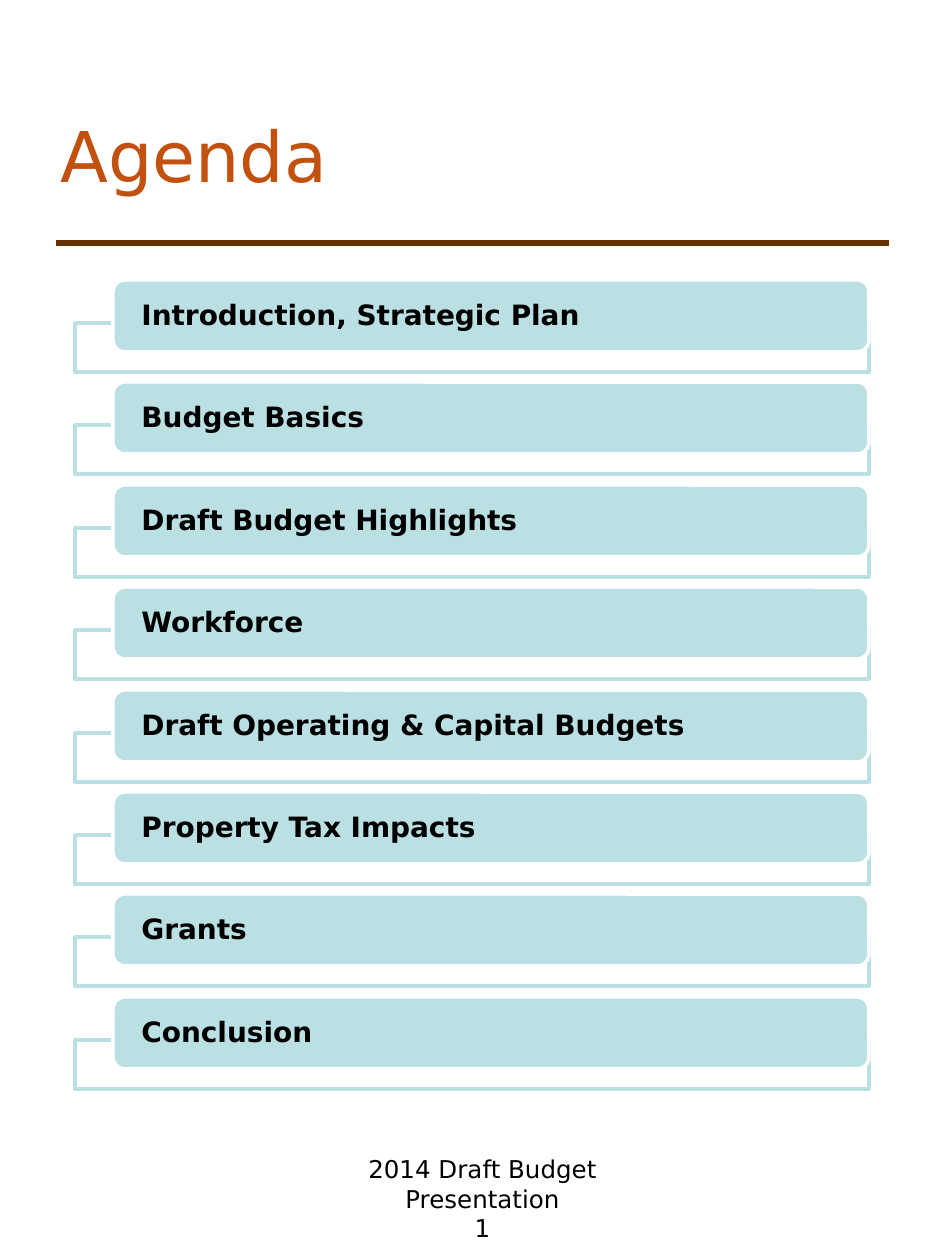
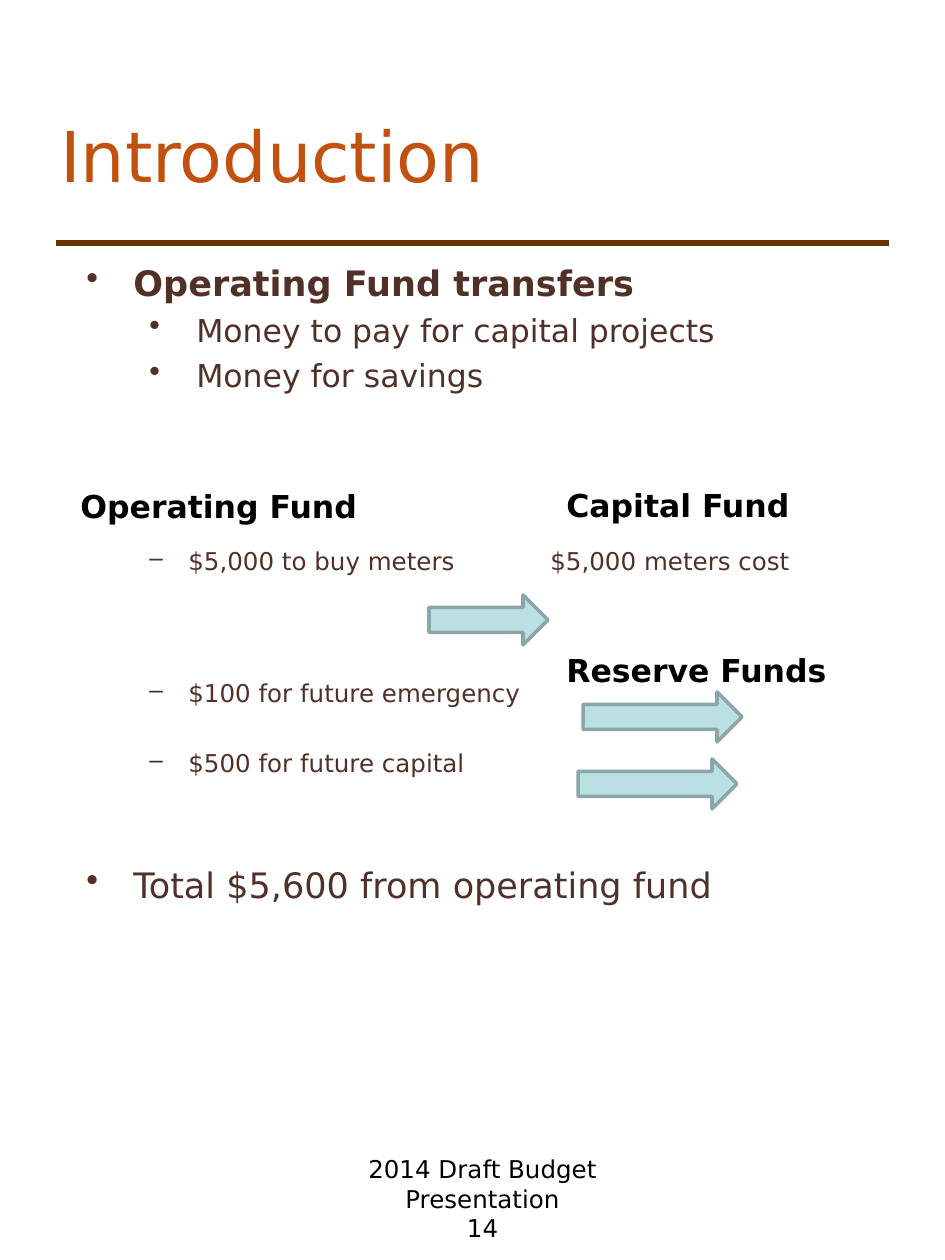
from lxml import etree
from pptx import Presentation
from pptx.dml.color import RGBColor
from pptx.enum.shapes import MSO_CONNECTOR, MSO_SHAPE
from pptx.enum.text import MSO_ANCHOR, PP_ALIGN
from pptx.oxml.ns import qn
from pptx.util import Pt

LEFT, CENTER = PP_ALIGN.LEFT, PP_ALIGN.CENTER
TOP, MIDDLE = MSO_ANCHOR.TOP, MSO_ANCHOR.MIDDLE
RECT, ROUND = MSO_SHAPE.RECTANGLE, MSO_SHAPE.ROUNDED_RECTANGLE
ARROW = MSO_SHAPE.RIGHT_ARROW

FONT = "DejaVu Sans"
COLORS = {
    "title": "C2510F", "rule": "663300", "body": "513127", "text": "000000",
    "aqua": "BBE0E3", "edge": "8AA6A8", "white": "FFFFFF",
}

FOOTER = "2014 Draft Budget Presentation"
AGENDA = [
    "Introduction, Strategic Plan", "Budget Basics",
    "Draft Budget Highlights", "Workforce",
    "Draft Operating & Capital Budgets", "Property Tax Impacts",
    "Grants", "Conclusion",
]
# style: level, bullet, size in pt, left margin and hang in px
STYLES = {
    "main": (0, "•", 20, 47, 47),
    "sub": (1, "•", 18, 110, 47),
    "fund": (1, "–", 14, 102, 39),
}
# style, bold, space before in pt, text
POINTS = [
    ("main", True, 0, "Operating Fund transfers"),
    ("sub", False, 4.2, "Money to pay for capital projects"),
    ("sub", False, 4.2, "Money for savings"),
    ("fund", False, 87, "$5,000 to buy meters\t$5,000 meters cost"),
    ("fund", False, 59, "$100 for future emergency"),
    ("fund", False, 22.8, "$500 for future capital"),
    ("main", False, 49.3, "Total $5,600 from operating fund"),
]
COST_TAB = 464
HEADS = [
    ("Operating Fund", 68, 481, 407),
    ("Capital Fund", 554, 480, 350),
    ("Reserve Funds", 554, 645, 367),
]
ARROWS = [(429, 595, 119), (583, 692, 159), (578, 759, 159)]


def px(n):
    return round(n * 914400 / 126)


def rgb(name):
    return RGBColor.from_string(COLORS[name])


def style(para, size, color, bold=False, align=LEFT):
    para.alignment = align
    font = para.font
    font.name, font.size, font.bold = FONT, Pt(size), bold
    font.color.rgb = rgb(color)


def add_text(slide, box, lines, size, color, bold=False, align=LEFT, anchor=TOP):
    frame = slide.shapes.add_textbox(*map(px, box)).text_frame
    frame.word_wrap = True
    frame.vertical_anchor = anchor
    frame.text = "\n".join(lines)
    for para in frame.paragraphs:
        style(para, size, color, bold, align)


def add_form(slide, kind, box, fill, line):
    form = slide.shapes.add_shape(kind, *map(px, box))
    form.shadow.inherit = False
    form.fill.solid()
    form.fill.fore_color.rgb = rgb(fill)
    form.line.color.rgb = rgb(line)
    form.line.width = Pt(2)
    return form


def add_page(deck, title, number):
    """Add a slide with the shared title, rule and footer."""
    slide = deck.slides.add_slide(deck.slide_layouts[6])
    add_text(slide, (323, 1148, 319, 98), [FOOTER, number], 14, "text", align=CENTER)
    rule = slide.shapes.add_connector(
        MSO_CONNECTOR.STRAIGHT, px(56), px(243), px(889), px(243))
    rule.line.color.rgb = rgb("rule")
    rule.line.width = Pt(3.5)
    etree.SubElement(rule._element.spPr, qn("a:effectLst"))
    add_text(slide, (48, 50, 850, 210), [title], 40, "title", anchor=MIDDLE)
    return slide


def add_agenda(slide):
    for i, item in enumerate(AGENDA):
        top = 280 + round(i * 102.4)
        add_form(slide, RECT, (75, top + 43, 794, 49), "white", "aqua")
        bar = add_form(slide, ROUND, (113, top, 756, 72), "aqua", "white")
        frame = bar.text_frame
        frame.margin_left = frame.margin_right = px(25)
        frame.margin_top = frame.margin_bottom = 0
        frame.vertical_anchor = MIDDLE
        frame.text = item
        para = frame.paragraphs[0]
        para.line_spacing = 0.9
        style(para, 16, "text", True)


def add_points(slide):
    frame = slide.shapes.add_textbox(*map(px, (74, 255, 804, 774))).text_frame
    frame.word_wrap = True
    for i, (kind, bold, before, text) in enumerate(POINTS):
        para = frame.add_paragraph() if i else frame.paragraphs[0]
        level, mark, size, left, hang = STYLES[kind]
        para.text = text
        para.level = level
        para.space_before = Pt(before)
        props = para._p.get_or_add_pPr()
        props.set("marL", str(px(left)))
        props.set("indent", str(-px(hang)))
        etree.SubElement(props, qn("a:buChar"), char=mark)
        if "\t" in text:
            tabs = etree.SubElement(props, qn("a:tabLst"))
            etree.SubElement(tabs, qn("a:tab"), pos=str(px(COST_TAB)), algn="l")
        style(para, size, "body", bold)


def main():
    deck = Presentation()
    deck.slide_width, deck.slide_height = px(945), px(1260)

    add_agenda(add_page(deck, "Agenda", "1"))

    intro = add_page(deck, "Introduction", "14")
    add_points(intro)
    for text, left, top, width in HEADS:
        add_text(intro, (left, top, width, 50), [text], 18, "text", True)
    for left, top, width in ARROWS:
        add_form(intro, ARROW, (left, top, width, 50), "aqua", "edge")

    deck.save("out.pptx")


if __name__ == "__main__":
    main()
